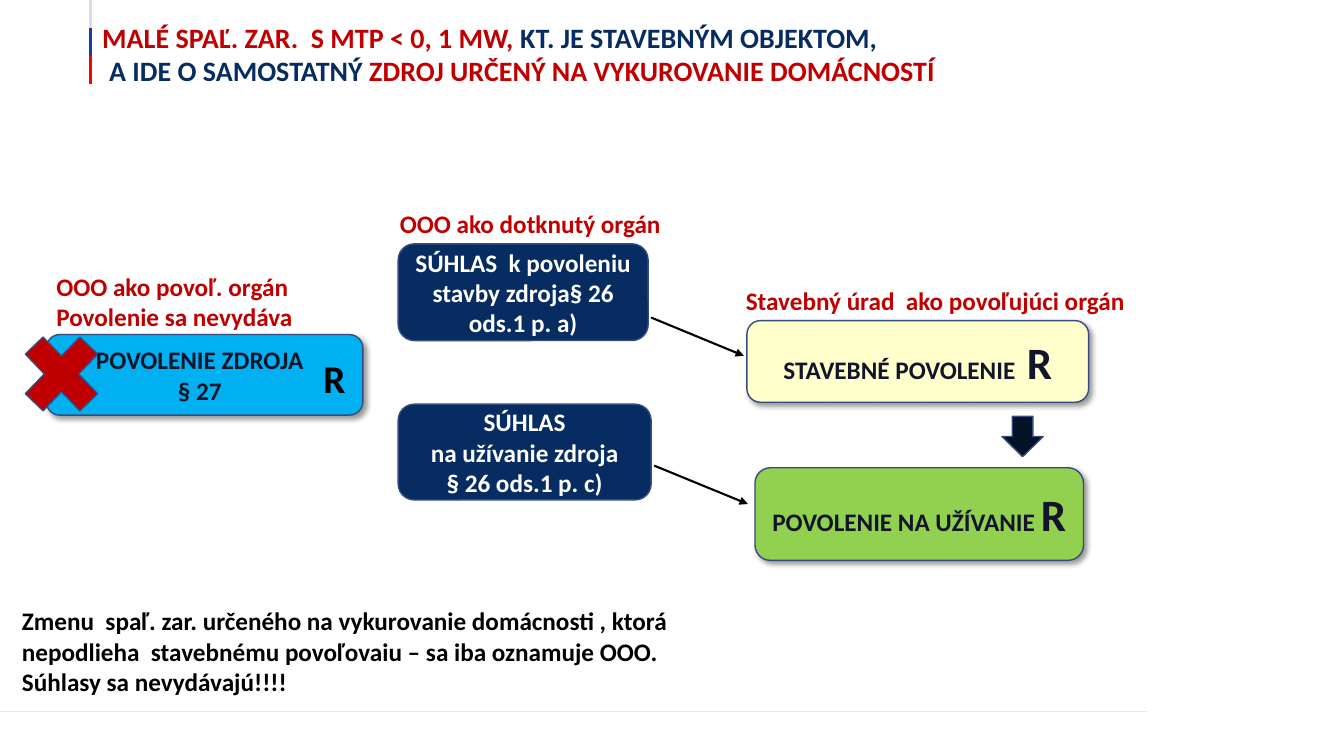
import pptx
import pptx.util
import pptx.dml.color
import pptx.enum.shapes
import pptx.enum.text
import pptx.oxml
import pptx.oxml.ns
from lxml import etree

Pt = pptx.util.Pt
Shape = pptx.enum.shapes.MSO_SHAPE
Align = pptx.enum.text.PP_ALIGN
Anchor = pptx.enum.text.MSO_ANCHOR

RED, NAVY, DARK, BLACK, WHITE = "C00000", "072C62", "121429", "000000", "FFFFFF"
EDGE = "374B7F"
SHADE = (
    f'<a:effectLst {pptx.oxml.ns.nsdecls("a")}>'
    '<a:outerShdw blurRad="50800" dist="38100" dir="2700000" algn="tl" rotWithShape="0">'
    '<a:srgbClr val="000000"><a:alpha val="40000"/></a:srgbClr>'
    '</a:outerShdw></a:effectLst>'
)


def paint(target, color):
    """Give a font or a line a solid colour."""
    target.color.rgb = pptx.dml.color.RGBColor.from_string(color)


def style(font, size, color):
    font.name, font.size, font.bold = "Calibri", Pt(size), True
    paint(font, color)


def write(frame, lines, size, color, align=Align.LEFT):
    """Fill a frame; a line is a string or a list of (text, size, color) runs."""
    frame.word_wrap = True
    for i, line in enumerate(lines):
        para = frame.paragraphs[0] if i == 0 else frame.add_paragraph()
        para.alignment = align
        if isinstance(line, str):
            para.add_run().text = line
            style(para.font, size, color)
            continue
        for text, points, tint in line:
            run = para.add_run()
            run.text = text
            style(run.font, points, tint)


def add_title(slide):
    title = slide.shapes.title
    title.left, title.top, title.width, title.height = Pt(62), Pt(10.8), Pt(810), Pt(55.7)
    frame = title.text_frame
    frame.auto_size = pptx.enum.text.MSO_AUTO_SIZE.NONE
    frame.vertical_anchor = Anchor.TOP
    frame.margin_left = Pt(11)
    write(frame, [
        [("MALÉ SPAĽ. ZAR.  S MTP < 0, 1 MW, ", 20, RED),
         ("KT. JE STAVEBNÝM OBJEKTOM,", 20, NAVY)],
        [("A IDE O SAMOSTATNÝ ", 20, NAVY),
         ("ZDROJ URČENÝ NA VYKUROVANIE DOMÁCNOSTÍ", 20, RED)],
    ], 20, NAVY)
    frame.paragraphs[1]._p.get_or_add_pPr().set("marL", str(Pt(5)))


def add_label(slide, box, lines, size=18, color=RED):
    label = slide.shapes.add_textbox(*map(Pt, box))
    write(label.text_frame, lines, size, color)
    return label


def add_form(slide, kind, box, fill):
    form = slide.shapes.add_shape(kind, *map(Pt, box))
    form.shadow.inherit = False
    form.fill.solid()
    form.fill.fore_color.rgb = pptx.dml.color.RGBColor.from_string(fill)
    paint(form.line, EDGE)
    form.line.width = Pt(1)
    return form


def add_step(slide, box, fill, lines, color, shade=True):
    step = add_form(slide, Shape.FLOWCHART_ALTERNATE_PROCESS, box, fill)
    if shade:
        props = step._element.spPr
        props.remove(props.find(pptx.oxml.ns.qn("a:effectLst")))
        props.append(pptx.oxml.parse_xml(SHADE))
    step.text_frame.vertical_anchor = Anchor.MIDDLE
    write(step.text_frame, lines, 18, color, Align.CENTER)
    return step


def add_line(slide, ends, color, width, arrow=False):
    line = slide.shapes.add_connector(
        pptx.enum.shapes.MSO_CONNECTOR.STRAIGHT, *map(Pt, ends))
    paint(line.line, color)
    line.line.width = Pt(width)
    if arrow:
        tail = etree.SubElement(line.line._get_or_add_ln(), pptx.oxml.ns.qn("a:tailEnd"))
        tail.set("type", "triangle")
    etree.SubElement(line._element.spPr, pptx.oxml.ns.qn("a:effectLst"))


def add_frame(slide):
    """Draw the three-colour rule beside the title and the footer rule."""
    for i, color in enumerate(("DDDDDD", "1C37A8", "FF0000")):
        add_line(slide, (64.8, 20 * i, 64.8, 20 * (i + 1)), color, 2.25)
    add_line(slide, (0, 508.3, 819.4, 508.3), "E8E8E8", 1)


def main():
    deck = pptx.Presentation()
    deck.slide_width, deck.slide_height = Pt(960), Pt(540)
    slide = deck.slides.add_slide(deck.slide_layouts[5])
    add_frame(slide)
    add_title(slide)

    add_step(slide, (284.4, 174.2, 178.6, 69.1), NAVY,
             ["SÚHLAS  k povoleniu stavby zdroja§ 26 ods.1 p. a)"], WHITE, False)
    add_step(slide, (284.4, 288.7, 180.7, 68.4), NAVY,
             ["SÚHLAS", "na užívanie zdroja", "§ 26 ods.1 p. c)"], WHITE, False)
    add_step(slide, (533.5, 229, 244.1, 58.3), "FFFFCC",
             [[("STAVEBNÉ POVOLENIE  ", 18, DARK), ("R", 32, DARK)]], DARK)
    add_step(slide, (539.3, 334.1, 234.7, 66.2), "92D050",
             [[("POVOLENIE NA UŽÍVANIE ", 18, DARK), ("R", 32, DARK)]], DARK)
    source = add_step(slide, (33.1, 239, 226.1, 57.6), "00B0F0",
                      ["POVOLENIE ZDROJA", "§ 27"], DARK)
    source.text_frame.margin_right = Pt(14)

    add_line(slide, (465.1, 226.8, 531.4, 254.2), BLACK, 1.5, True)
    add_line(slide, (467.3, 332.6, 534.2, 360), BLACK, 1.5, True)

    add_label(slide, (33.1, 190.1, 202.3, 51.1),
              ["OOO ako povoľ. orgán", "Povolenie sa nevydáva"])
    add_label(slide, (278.6, 145.4, 232.6, 28.8), ["OOO ako dotknutý orgán"])
    add_label(slide, (525.6, 200.2, 306, 28.8), ["Stavebný úrad  ako povoľujúci orgán"])
    add_form(slide, Shape.MATH_MULTIPLY, (6.5, 228.2, 74.9, 77.8), RED)
    add_label(slide, (8.6, 429.1, 540.7, 72.7),
              ["Zmenu  spaľ. zar. určeného na vykurovanie domácnosti , ktorá "
               "nepodlieha  stavebnému povoľovaiu – sa iba oznamuje OOO.",
               "Súhlasy sa nevydávajú!!!!"], color=BLACK)
    add_form(slide, Shape.DOWN_ARROW, (715.7, 297.4, 29.5, 28.8), "031227")
    mark = add_label(slide, (223.9, 249.8, 32, 41), ["R"], 28, BLACK)
    mark.text_frame.word_wrap = False

    deck.save("out.pptx")


if __name__ == "__main__":
    main()
